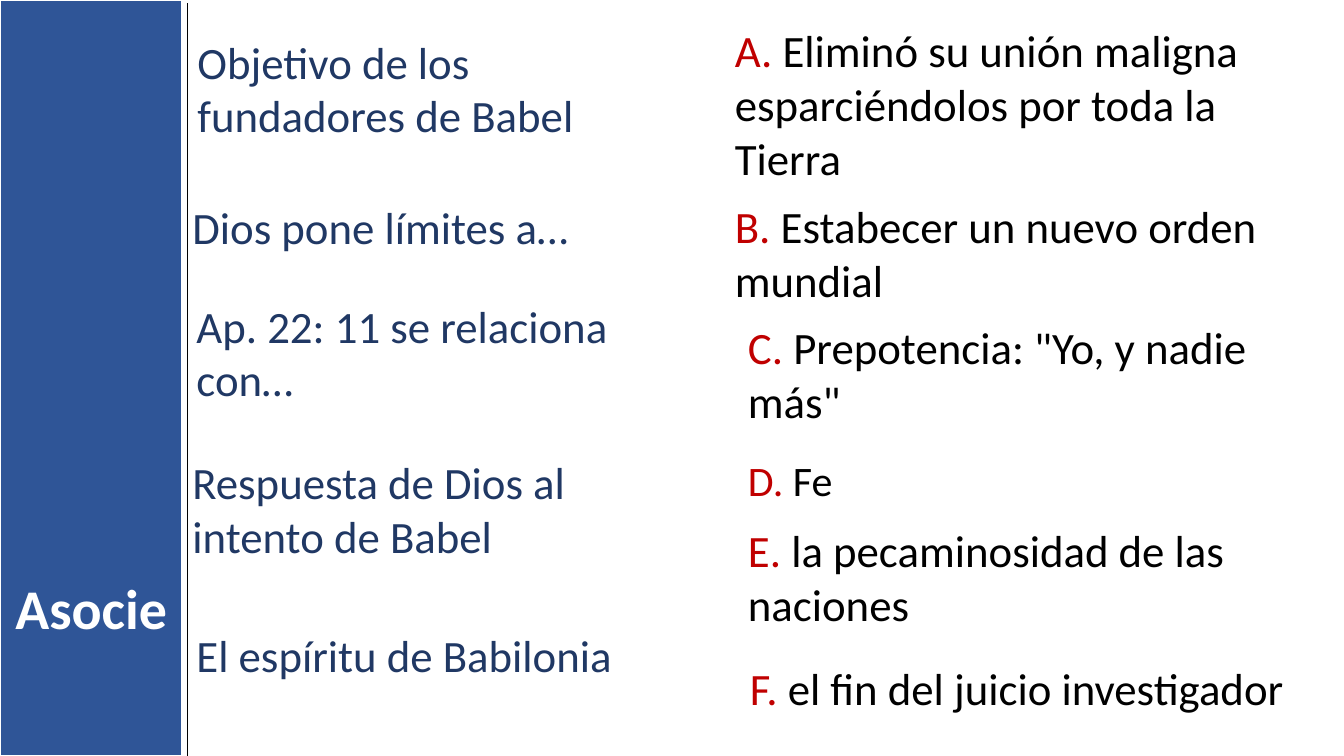
from dataclasses import dataclass

from lxml import etree
from pptx import Presentation
from pptx.dml.color import RGBColor
from pptx.enum.shapes import MSO_CONNECTOR, MSO_SHAPE
from pptx.enum.text import MSO_AUTO_SIZE, PP_ALIGN
from pptx.oxml.ns import qn
from pptx.util import Inches, Pt

RECTANGLE = MSO_SHAPE.RECTANGLE
STRAIGHT = MSO_CONNECTOR.STRAIGHT
CENTER = PP_ALIGN.CENTER
GROW = MSO_AUTO_SIZE.SHAPE_TO_FIT_TEXT


@dataclass(frozen=True)
class Theme:
    font: str = "Calibri"
    band: RGBColor = RGBColor(0x2F, 0x55, 0x97)
    prompt: RGBColor = RGBColor(0x20, 0x38, 0x64)
    letter: RGBColor = RGBColor(0xC0, 0x00, 0x00)
    black: RGBColor = RGBColor(0x00, 0x00, 0x00)
    white: RGBColor = RGBColor(0xFF, 0xFF, 0xFF)
    title_size: int = 40
    body_size: int = 32
    small_size: int = 30


@dataclass(frozen=True)
class Box:
    """A region in inches."""
    left: float
    top: float
    width: float
    height: float

    def inner(self, left, top, width, height):
        return Box(self.left + left, self.top + top, width, height)

    def lengths(self):
        return [Inches(value) for value in (self.left, self.top, self.width, self.height)]


THEME = Theme()
SLIDE = Box(0, 0, 13.33, 7.5)
SIDEBAR = Box(0, 0, 1.81, 7.5)
PROMPT_COLUMN = Box(1.81, 0, 5.16, 7.5)
ANSWER_COLUMN = Box(7.19, 0, 5.96, 7.5)

# Text, then left, top, width and height inside the column
PROMPTS = [
    ("Objetivo de los fundadores de Babel", (0.05, 0.29, 4.89, 1.18)),
    ("Dios pone límites a…", (0, 1.93, 5.16, 0.64)),
    ("Ap. 22: 11 se relaciona con…", (0.04, 2.91, 4.46, 1.18)),
    ("Respuesta de Dios al intento de Babel", (0, 4.46, 4.94, 1.18)),
    ("El espíritu de Babilonia", (0.04, 6.18, 4.46, 0.64)),
]
# Text, size, then left, top, width and height inside the column
ANSWERS = [
    ("Eliminó su unión maligna esparciéndolos por toda la Tierra",
     THEME.body_size, (0, 0.18, 5.96, 1.72)),
    ("Estabecer un nuevo orden mundial", THEME.body_size, (0, 1.92, 5.96, 1.18)),
    ('Prepotencia: "Yo, y nadie más"', THEME.body_size, (0.13, 3.12, 5.6, 1.18)),
    ("Fe", THEME.small_size, (0.13, 4.46, 5.23, 0.61)),
    ("la pecaminosidad de las naciones", THEME.body_size, (0.13, 5.14, 5.53, 1.18)),
    ("el fin del juicio investigador", THEME.body_size, (0.15, 6.51, 5.67, 0.64)),
]


def add_text(page, box, spans, size):
    """Add a one-paragraph text box from (text, colour) spans; return the paragraph."""
    frame = page.shapes.add_textbox(*box.lengths()).text_frame
    frame.word_wrap = True
    frame.auto_size = GROW
    para = frame.paragraphs[0]
    para.font.name = THEME.font
    para.font.size = Pt(size)
    for text, color in spans:
        span = para.add_run()
        span.text = text
        span.font.color.rgb = color
    return para


def add_sidebar(page, box):
    band = page.shapes.add_shape(RECTANGLE, *box.lengths())
    band.shadow.inherit = False
    band.fill.solid()
    band.fill.fore_color.rgb = THEME.band
    band.line.color.rgb = THEME.white
    band.line.width = Pt(1.5)

    title_box = box.inner(0, 5.64, box.width, 0.77)
    title = add_text(page, title_box, [("Asocie", THEME.white)], THEME.title_size)
    title.alignment = CENTER
    title.font.bold = True

    rule_x = Inches(box.left + box.width + 0.05)
    rule = page.shapes.add_connector(
        STRAIGHT, rule_x, Inches(box.top + 0.03), rule_x, Inches(box.top + box.height))
    rule.line.color.rgb = THEME.black
    rule.line.width = Pt(1)
    etree.SubElement(rule.element.spPr, qn("a:effectLst"))


def add_prompts(page, box):
    for text, place in PROMPTS:
        add_text(page, box.inner(*place), [(text, THEME.prompt)], THEME.body_size)


def add_answers(page, box):
    for letter, (text, size, place) in zip("ABCDEF", ANSWERS):
        spans = [(f"{letter}. ", THEME.letter), (text, THEME.black)]
        add_text(page, box.inner(*place), spans, size)


def main():
    deck = Presentation()
    deck.slide_width = Inches(SLIDE.width)
    deck.slide_height = Inches(SLIDE.height)
    page = deck.slides.add_slide(deck.slide_layouts[6])
    add_sidebar(page, SIDEBAR)
    add_prompts(page, PROMPT_COLUMN)
    add_answers(page, ANSWER_COLUMN)
    deck.save("out.pptx")


if __name__ == "__main__":
    main()
